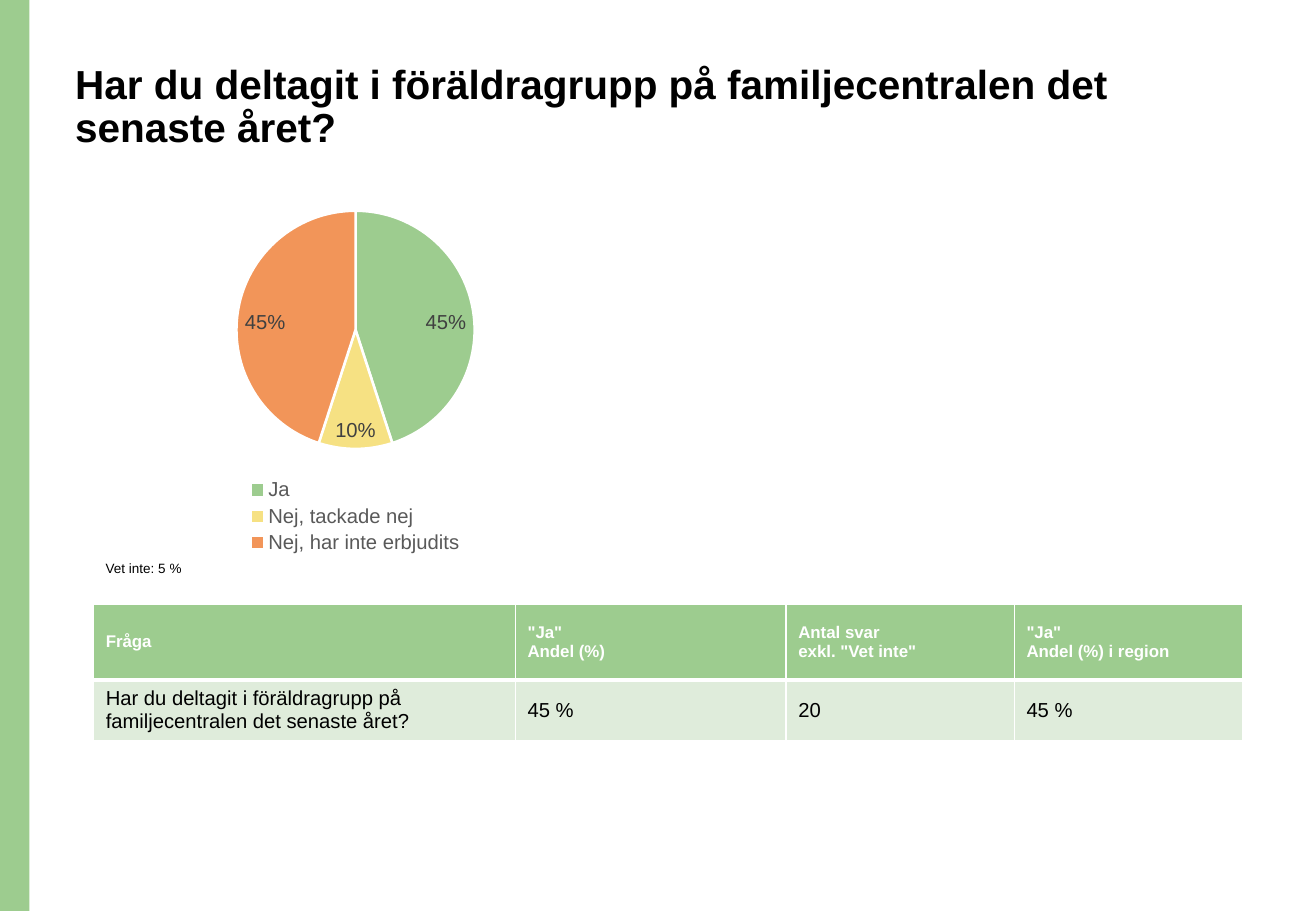
from lxml import etree
from pptx import Presentation
from pptx.chart.data import CategoryChartData
from pptx.dml.color import RGBColor
from pptx.enum import chart as ch, shapes, text
from pptx.oxml import ns
from pptx.util import Pt

COLORS = {
    "green": "9DCC8F", "yellow": "F6E183", "orange": "F29559",
    "pale": "DFECDB", "white": "FFFFFF", "black": "000000",
    "label": "404040", "legend": "595959",
}
QUESTION = "Har du deltagit i föräldragrupp på familjecentralen det senaste året?"
ANSWERS = [
    ("Ja", 0.45, "green"),
    ("Nej, tackade nej", 0.1, "yellow"),
    ("Nej, har inte erbjudits", 0.45, "orange"),
]
HEADERS = ["Fråga", '"Ja"\nAndel (%)', 'Antal svar\nexkl. "Vet inte"',
           '"Ja"\nAndel (%) i region']
RESULTS = [QUESTION, "45 %", "20", "45 %"]
COLUMN_WIDTHS = [250, 160.5, 135.25, 135.25]
ROW_HEIGHTS = [45, 32.5]


def rgb(name):
    return RGBColor.from_string(COLORS[name])


def set_font(font, size, color, bold=False):
    font.name = "Arial"
    font.size = Pt(size)
    font.bold = bold
    font.color.rgb = rgb(color)


def write(frame, content, size, color, bold=False, spacing=None):
    frame.text = content
    for paragraph in frame.paragraphs:
        if spacing:
            paragraph.line_spacing = spacing
        for run in paragraph.runs:
            set_font(run.font, size, color, bold)


def add_side_band(slide, width, height):
    band = slide.shapes.add_shape(shapes.MSO_SHAPE.RECTANGLE, 0, 0, width, height)
    band.shadow.inherit = False
    band.fill.solid()
    band.fill.fore_color.rgb = rgb("green")
    band.line.fill.background()


def add_text(slide, box, content, size, bold=False, spacing=1.0):
    frame = slide.shapes.add_textbox(*map(Pt, box)).text_frame
    frame.word_wrap = True
    write(frame, content, size, "black", bold, spacing)


def add_answer_pie(slide, box):
    answers = CategoryChartData(number_format="0%")
    answers.categories = [name for name, _, _ in ANSWERS]
    answers.add_series("Series 1", [share for _, share, _ in ANSWERS])
    pie = slide.shapes.add_chart(ch.XL_CHART_TYPE.PIE, *map(Pt, box), answers).chart
    set_font(pie.font, 10, "black")
    pie.has_title = False
    pie.has_legend = True
    pie.legend.position = ch.XL_LEGEND_POSITION.BOTTOM
    pie.legend.include_in_layout = False
    set_font(pie.legend.font, 12, "legend")

    plot = pie.plots[0]
    plot.vary_by_categories = True
    for index, (_, _, color) in enumerate(ANSWERS):
        slice_format = plot.series[0].points[index].format
        slice_format.fill.solid()
        slice_format.fill.fore_color.rgb = rgb(color)
        slice_format.line.color.rgb = rgb("white")
        slice_format.line.width = Pt(1.5)

    plot.has_data_labels = True
    labels = plot.data_labels
    labels.show_value = True
    labels.show_percentage = False
    labels.number_format = '[<0.01]"";[>0.01]0%'
    labels.number_format_is_linked = False
    labels.position = ch.XL_LABEL_POSITION.INSIDE_END
    set_font(labels.font, 12, "label")


def set_borders(cell, bottom_width):
    """Draw white cell borders; the XML order puts them before the fill."""
    properties = cell._tc.get_or_add_tcPr()
    widths = {"a:lnL": 1, "a:lnR": 1, "a:lnT": 1, "a:lnB": bottom_width}
    for position, (tag, width) in enumerate(widths.items()):
        line = etree.Element(ns.qn(tag), w=str(Pt(width)))
        fill = etree.SubElement(line, ns.qn("a:solidFill"))
        etree.SubElement(fill, ns.qn("a:srgbClr"), val=COLORS["white"])
        properties.insert(position, line)


def add_result_table(slide, left, top):
    table = slide.shapes.add_table(
        2, len(HEADERS), Pt(left), Pt(top),
        Pt(sum(COLUMN_WIDTHS)), Pt(sum(ROW_HEIGHTS))).table
    for column, width in zip(table.columns, COLUMN_WIDTHS):
        column.width = Pt(width)
    for row, height in zip(table.rows, ROW_HEIGHTS):
        row.height = Pt(height)

    row_styles = [(HEADERS, "green", 10, "white", True, 3),
                  (RESULTS, "pale", 12, "black", False, 1)]
    for row, (contents, fill, size, color, bold, bottom) in zip(table.rows, row_styles):
        for cell, content in zip(row.cells, contents):
            cell.vertical_anchor = text.MSO_ANCHOR.MIDDLE
            cell.fill.solid()
            cell.fill.fore_color.rgb = rgb(fill)
            write(cell.text_frame, content, size, color, bold)
            set_borders(cell, bottom)


def main():
    deck = Presentation()
    deck.slide_width, deck.slide_height = Pt(780), Pt(540)
    slide = deck.slides.add_slide(deck.slide_layouts[6])
    add_side_band(slide, Pt(17.5), deck.slide_height)
    add_text(slide, (37.5, 34.5, 672.5, 73.5), QUESTION, 24, bold=True, spacing=0.9)
    add_answer_pie(slide, (88, 115, 245.5, 216))
    add_result_table(slide, 55.5, 358)
    add_text(slide, (55.5, 323.5, 151, 34.5), "Vet inte: 5 %", 8, spacing=1.5)
    deck.save("out.pptx")


if __name__ == "__main__":
    main()
